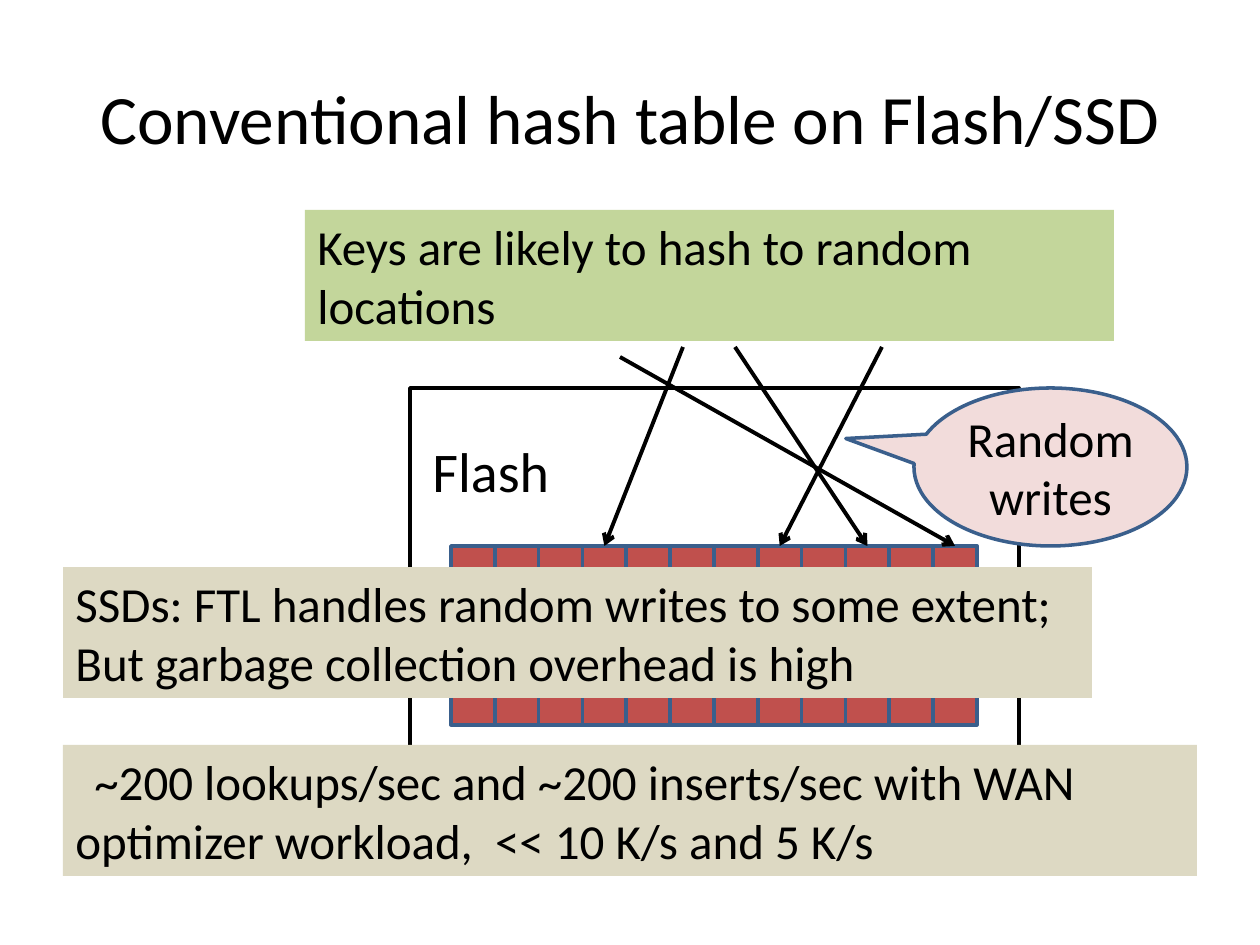
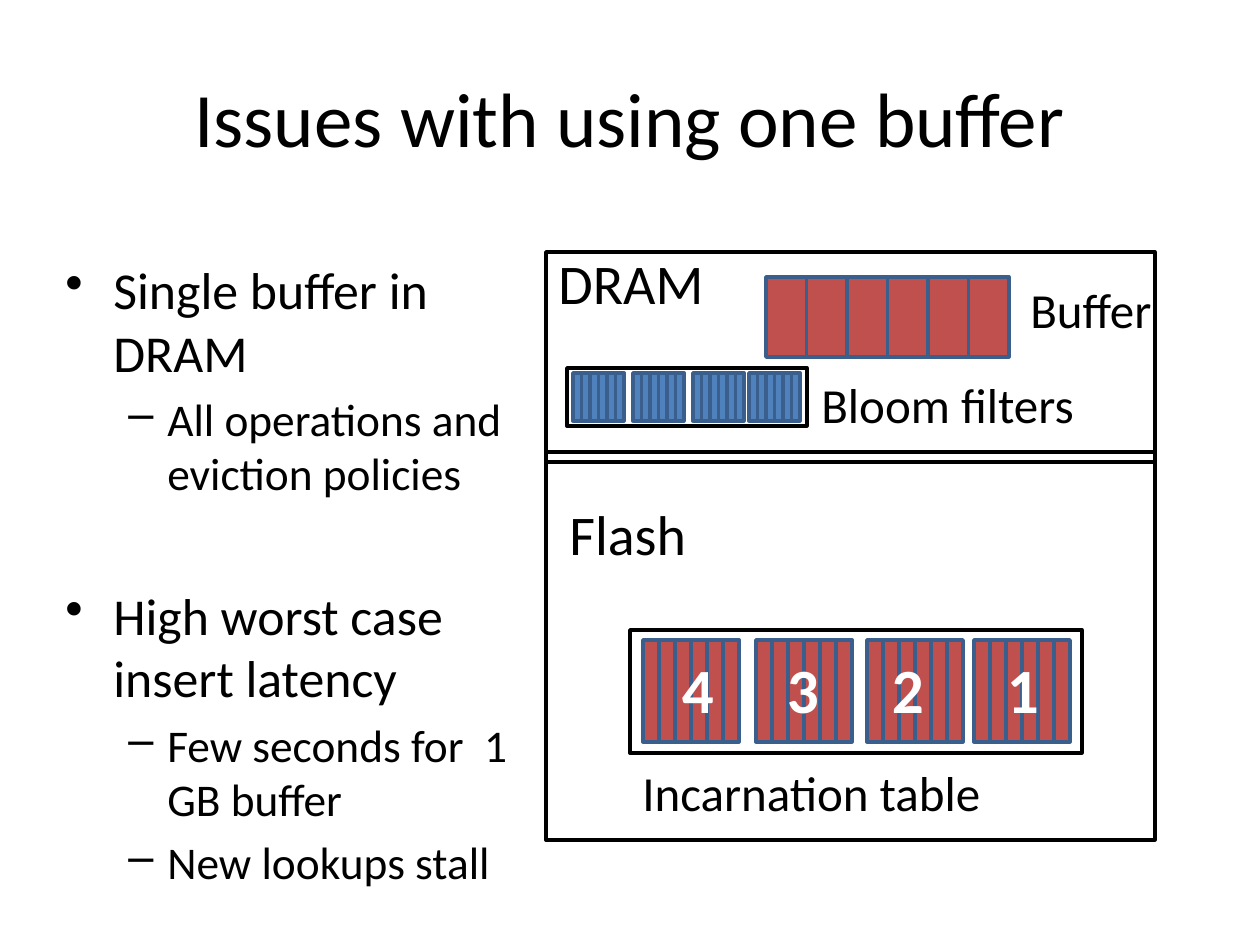
from lxml.etree import SubElement
from pptx import Presentation
from pptx.dml.color import RGBColor
from pptx.enum.shapes import MSO_CONNECTOR, MSO_SHAPE
from pptx.enum.text import MSO_ANCHOR, PP_ALIGN
from pptx.oxml.ns import qn
from pptx.util import Pt

PX = 7257  # EMU in one px, 126 px to the inch
FONT = "Calibri"
BLACK = RGBColor(0x00, 0x00, 0x00)
WHITE = RGBColor(0xFF, 0xFF, 0xFF)
RED = RGBColor(0xC0, 0x50, 0x4D)
BLUE = RGBColor(0x4F, 0x81, 0xBD)
NAVY = RGBColor(0x3A, 0x5F, 0x8C)
GREEN = RGBColor(0xC3, 0xD6, 0x9B)
PINK = RGBColor(0xF2, 0xDC, 0xDB)
TAN = RGBColor(0xDD, 0xD9, 0xC3)


def add_box(slide, at, text="", size=28, fill=None, line=None, color=BLACK,
            bold=False, middle=False, kind=MSO_SHAPE.RECTANGLE):
    """Add a shape, or a text box when there is neither fill nor line."""
    place = [n * PX for n in at]
    if fill or line:
        box = slide.shapes.add_shape(kind, *place)
        box.shadow.inherit = False
    else:
        box = slide.shapes.add_textbox(*place)
    if fill:
        box.fill.solid()
        box.fill.fore_color.rgb = fill
    else:
        box.fill.background()
    if line:
        box.line.color.rgb = line
        box.line.width = Pt(2)
    else:
        box.line.fill.background()
    if text:
        frame = box.text_frame
        frame.word_wrap = True
        frame.vertical_anchor = MSO_ANCHOR.MIDDLE if middle else MSO_ANCHOR.TOP
        para = frame.paragraphs[0]
        para.text = text
        para.alignment = PP_ALIGN.CENTER if middle else PP_ALIGN.LEFT
        para.font.name = FONT
        para.font.size = Pt(size)
        para.font.bold = bold
        para.font.color.rgb = color
    return box


def add_strip(slide, left, top, width, height, count, fill):
    """Add a row of equal cells and return them from left to right."""
    cells = []
    for i in range(count):
        cell = add_box(slide, (left, top, width, height), fill=fill, line=NAVY)
        cell.left = left * PX + i * width * PX // count
        cell.width = width * PX // count
        cells.append(cell)
    return cells


prs = Presentation()
prs.slide_width = 1260 * PX
prs.slide_height = 945 * PX

slides = []
for title, size in (("Conventional hash table on Flash/SSD", 39.6),
                    ("Issues with using one buffer", 44)):
    slide = prs.slides.add_slide(prs.slide_layouts[6])
    add_box(slide, (63, 38, 1134, 157), title, size, middle=True)
    slides.append(slide)
hashing, issues = slides

# Slide 1: keys hashed to random cells in flash
add_box(hashing, (410, 388, 609, 388), line=BLACK)
add_box(hashing, (420, 430, 220, 81), "Flash", 32)
cells = add_strip(hashing, 451, 546, 526, 179, 12, RED)

for x, y, hit in ((683, 347, 3), (735, 347, 9), (882, 347, 7), (620, 357, 11)):
    arrow = hashing.shapes.add_connector(
        MSO_CONNECTOR.STRAIGHT, x * PX, y * PX, x * PX, 546 * PX)
    arrow.end_connect(cells[hit], 0)
    arrow.line.color.rgb = BLACK
    arrow.line.width = Pt(2.25)
    SubElement(arrow.line._get_or_add_ln(), qn("a:tailEnd"), type="arrow")
    SubElement(arrow._element.spPr, qn("a:effectLst"))

add_box(hashing, (305, 210, 809, 131),
        "Keys are likely to hash to random locations", fill=GREEN)
callout = add_box(hashing, (914, 388, 273, 158), "Random writes", fill=PINK,
                  line=NAVY, middle=True, kind=MSO_SHAPE.OVAL_CALLOUT)
callout.adjustments[0] = -0.75
callout.adjustments[1] = -0.18
add_box(hashing, (63, 567, 1029, 131),
        "SSDs: FTL handles random writes to some extent;\v"
        "But garbage collection overhead is high", fill=TAN)
rates = add_box(hashing, (63, 745, 1134, 131),
                "~200 lookups/sec and ~200 inserts/sec with WAN optimizer "
                "workload,  << 10 K/s and 5 K/s", fill=TAN)
rates.text_frame.paragraphs[0]._p.get_or_add_pPr().set("indent", str(19 * PX))

# Slide 2: bulleted issues beside the memory layout
body = add_box(issues, (53, 252, 494, 630)).text_frame
body.word_wrap = True
levels = ((29.6, 48, -48, "•"), (25.9, 102, -39, "–"))  # size, margin, indent, mark
points = (
    (0, 6, "Single buffer in DRAM"),
    (1, 5, "All operations and eviction policies"),
    (0, 48, "High worst case insert latency"),
    (1, 5, "Few seconds for  1 GB buffer"),
    (1, 5, "New lookups stall"),
)
for i, (level, gap, text) in enumerate(points):
    size, margin, indent, mark = levels[level]
    para = body.add_paragraph() if i else body.paragraphs[0]
    para.text = text
    para.level = level
    para.space_before = Pt(gap)
    para.font.name = FONT
    para.font.size = Pt(size)
    para.font.color.rgb = BLACK
    props = para._p.get_or_add_pPr()
    props.set("marL", str(margin * PX))
    props.set("indent", str(indent * PX))
    bullet = props.makeelement(qn("a:buChar"), {"char": mark})
    props.find(qn("a:defRPr")).addprevious(bullet)

for frame in ((546, 252, 609, 210), (546, 452, 609, 388),
              (630, 630, 452, 123), (567, 368, 240, 58)):
    add_box(issues, frame, line=BLACK)

add_strip(issues, 766, 277, 243, 80, 6, RED)
for left in (573, 633, 693, 749):
    add_strip(issues, left, 373, 51, 48, 6, BLUE)
for number, left, mid in ((4, 643, 698), (3, 756, 803), (2, 867, 908), (1, 974, 1023)):
    add_strip(issues, left, 640, 96, 102, 6, RED)
    add_box(issues, (mid - 68, 620, 136, 136), str(number), 36,
            color=WHITE, bold=True, middle=True)

for text, size, at in (("DRAM", 32, (546, 242, 231, 81)),
                       ("Flash", 32, (557, 493, 231, 81)),
                       ("Buffer", 28, (1018, 273, 179, 72)),
                       ("Bloom filters", 28, (809, 368, 347, 72)),
                       ("Incarnation table", 28, (630, 756, 462, 72))):
    add_box(issues, at, text, size)

prs.save("out.pptx")
